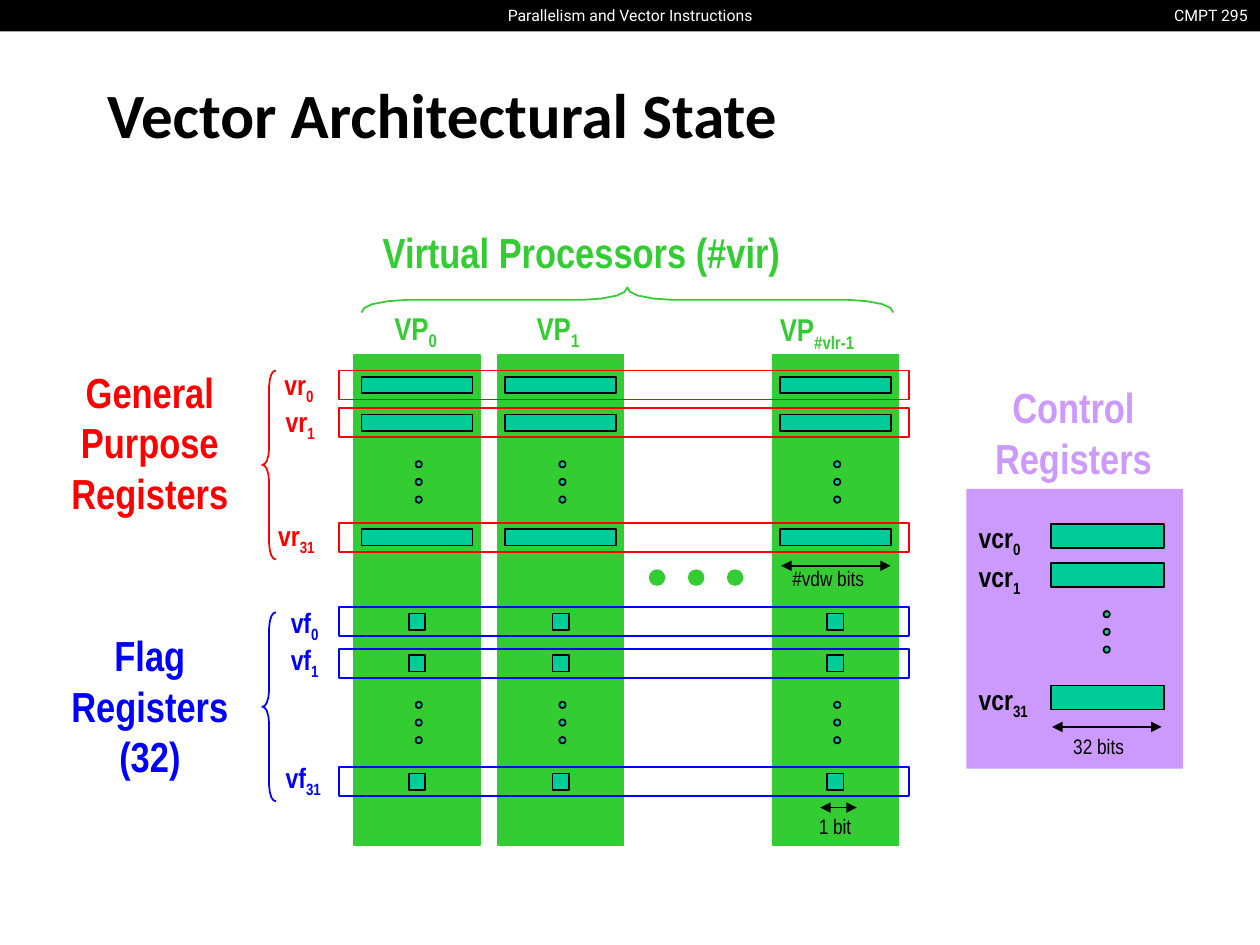
"""Builds a slide on the register state of a vector architecture."""
from dataclasses import dataclass

from lxml import etree
from pptx import Presentation
from pptx.dml.color import RGBColor
from pptx.enum.shapes import MSO_CONNECTOR, MSO_SHAPE
from pptx.enum.text import MSO_ANCHOR, MSO_AUTO_SIZE, PP_ALIGN
from pptx.oxml.ns import qn
from pptx.util import Pt

RECT, OVAL = MSO_SHAPE.RECTANGLE, MSO_SHAPE.OVAL
STRAIGHT = MSO_CONNECTOR.STRAIGHT
LEFT, CENTER, RIGHT = PP_ALIGN.LEFT, PP_ALIGN.CENTER, PP_ALIGN.RIGHT
BOTTOM = MSO_ANCHOR.BOTTOM
NO_AUTOFIT = MSO_AUTO_SIZE.NONE


@dataclass(frozen=True)
class Theme:
    """Colours, fonts and type sizes of the slide."""
    black: str = "000000"
    white: str = "FFFFFF"
    red: str = "FF0000"
    blue: str = "0000FF"
    green: str = "33CC33"
    teal: str = "00CC99"
    violet: str = "CC99FF"
    body_font: str = "Arial Narrow"
    title_font: str = "Calibri"
    header_font: str = "Roboto"
    title: int = 36
    heading: int = 24
    processor: int = 18
    register: int = 16
    note: int = 12
    header: int = 9
    line: int = 1


THEME = Theme()

TITLE = ("Vector Architectural State", (54, 41.8, 563.8, 48.2))
HEADERS = [
    ("Parallelism and Vector Instructions", (283, 0, 154, 18), CENTER),
    ("CMPT 295", (661.7, 0, 58.3, 18), RIGHT),
]
HEADINGS = [
    ("General\nPurpose\nRegisters", (33.1, 205.9, 105.1, 123.1), THEME.red),
    ("Flag\nRegisters\n(32)", (33.1, 356.4, 105.1, 94.3), THEME.blue),
    ("Virtual Processors (#vir)", (210.2, 126, 244.1, 36), THEME.green),
    ("Control\nRegisters", (560.9, 214.6, 105.1, 65.5), THEME.violet),
]
PROCESSORS = [
    ("0", 202.3, (218.2, 172.8)),
    ("1", 284.4, (299.5, 172.8)),
    ("#vlr-1", 441.4, (438.5, 173.5)),
]
REGISTER_FILES = [
    {"name": "vr", "color": THEME.red, "cell": (63.4, 9.4), "dots_top": 263.5,
     "rows": [("0", 211.7, (155.5, 206.6)), ("1", 233.3, (156.2, 227.5)),
              ("31", 298.8, (151.9, 293))]},
    {"name": "vf", "color": THEME.blue, "cell": (9.4, 9.4), "dots_top": 401,
     "rows": [("0", 347, (159.1, 342.7)), ("1", 370.8, (159.1, 363.6)),
              ("31", 438.5, (156.2, 431.3))]},
]
CONTROL_PANEL = (552.2, 279.4, 123.8, 159.8)
CONTROL_ROWS = [("0", 299.5), ("1", 321.8), ("31", 391.7)]
WIDTH_NOTES = [
    ("#vdw bits", (445.7, 319.7, 55.4, 21.6), (446.4, 509, 323.3)),
    ("1 bit", (460.8, 461.5, 33.1, 21.6), (468.7, 489.6, 461.5)),
    ("32 bits", (606.2, 415.4, 43.9, 21.6), (601.2, 663.8, 415.4)),
]
BRACES = [
    ((149.8, 211.7, 7.9, 108), THEME.red, True),
    ((149.8, 349.9, 7.9, 108), THEME.blue, True),
    ((206.6, 164.2, 303.8, 14.4), THEME.green, False),
]
BRACE_CURVE = [(0, 0), (0.005, 0.18), (0.02, 0.33), (0.05, 0.45), (0.085, 0.5)]
COLUMN_TOP, COLUMN_WIDTH, COLUMN_HEIGHT = 203, 72, 280
ROW_LEFT, ROW_WIDTH, ROW_HEIGHT = 193.9, 325.4, 16.6
DOT, DOT_STEP = 3.6, 10.1
SKIPPED_DOT, SKIPPED_LEFT, SKIPPED_STEP, SKIPPED_TOP = 9.4, 370.8, 22.3, 325.4


def rgb(color):
    return RGBColor.from_string(color)


def write(shape, text, *, size, color, sub="", font=THEME.body_font,
          bold=True, align=LEFT):
    """Fills a shape with formatted lines and an optional subscript."""
    frame = shape.text_frame
    frame.auto_size = NO_AUTOFIT
    frame.text = text
    if sub:
        subscript = frame.paragraphs[-1].add_run()
        subscript.text = sub
        subscript._r.get_or_add_rPr().set("baseline", "-25000")
    for paragraph in frame.paragraphs:
        paragraph.alignment = align
        for run in paragraph.runs:
            run.font.name, run.font.size = font, Pt(size)
            run.font.bold, run.font.color.rgb = bold, rgb(color)
    return frame


def add_label(slide, text, box, **style):
    frame = write(slide.shapes.add_textbox(*map(Pt, box)), text, **style)
    frame.word_wrap = False


def paint(shape, fill=None, line=None):
    shape.shadow.inherit = False
    if fill:
        shape.fill.solid()
        shape.fill.fore_color.rgb = rgb(fill)
    else:
        shape.fill.background()
    if line:
        shape.line.color.rgb = rgb(line)
        shape.line.width = Pt(THEME.line)
    else:
        shape.line.fill.background()


def add_block(slide, box, fill=None, line=None, kind=RECT):
    paint(slide.shapes.add_shape(kind, *map(Pt, box)), fill, line)


def add_dots(slide, center, top):
    for i in range(3):
        box = (center - DOT / 2, top + i * DOT_STEP, DOT, DOT)
        add_block(slide, box, THEME.teal, THEME.black, OVAL)


def add_double_arrow(slide, start, end, y):
    arrow = slide.shapes.add_connector(STRAIGHT, Pt(start), Pt(y), Pt(end), Pt(y))
    arrow.line.color.rgb = rgb(THEME.black)
    arrow.line.width = Pt(THEME.line)
    outline = arrow.line._get_or_add_ln()
    for end_tag in ("a:headEnd", "a:tailEnd"):
        etree.SubElement(outline, qn(end_tag), type="triangle")
    etree.SubElement(arrow._element.spPr, qn("a:effectLst"))


def add_brace(slide, box, color, upright):
    left, top, width, height = box
    half = BRACE_CURVE + [(0.5 - t, 1 - d) for t, d in reversed(BRACE_CURVE)]
    curve = half + [(1 - t, d) for t, d in reversed(half[:-1])]
    if upright:
        points = [(left + width * (1 - d), top + height * t) for t, d in curve]
    else:
        points = [(left + width * t, top + height * (1 - d)) for t, d in curve]
    points = [(Pt(x), Pt(y)) for x, y in points]
    builder = slide.shapes.build_freeform(*points[0])
    builder.add_line_segments(points[1:], close=False)
    paint(builder.convert_to_shape(), line=color)


def add_register_file(slide, name, color, cell, dots_top, rows):
    width, height = cell
    centers = [left + COLUMN_WIDTH / 2 for _, left, _ in PROCESSORS]
    for number, top, corner in rows:
        add_block(slide, (ROW_LEFT, top, ROW_WIDTH, ROW_HEIGHT), line=color)
        add_label(slide, name, (*corner, 45, 26), sub=number,
                  size=THEME.register, color=color)
        for center in centers:
            box = (center - width / 2, top + (ROW_HEIGHT - height) / 2, *cell)
            add_block(slide, box, THEME.teal, THEME.black)
    for center in centers:
        add_dots(slide, center + 1, dots_top)


def main():
    deck = Presentation()
    deck.slide_width, deck.slide_height = Pt(720), Pt(540)
    slide = deck.slides.add_slide(deck.slide_layouts[5])

    add_block(slide, (0, 0, 720, 18), THEME.black)
    for text, box, align in HEADERS:
        add_label(slide, text, box, size=THEME.header, color=THEME.white,
                  font=THEME.header_font, bold=False, align=align)
    text, box = TITLE
    title = slide.shapes.title
    title.left, title.top, title.width, title.height = map(Pt, box)
    write(title, text, size=THEME.title, color=THEME.black,
          font=THEME.title_font).vertical_anchor = BOTTOM

    for number, left, corner in PROCESSORS:
        add_block(slide, (left, COLUMN_TOP, COLUMN_WIDTH, COLUMN_HEIGHT),
                  THEME.green, THEME.green)
        add_label(slide, "VP", (*corner, 70, 28.8), sub=number,
                  size=THEME.processor, color=THEME.green)
    for i in range(3):
        box = (SKIPPED_LEFT + i * SKIPPED_STEP, SKIPPED_TOP, SKIPPED_DOT, SKIPPED_DOT)
        add_block(slide, box, THEME.green, kind=OVAL)
    for register_file in REGISTER_FILES:
        add_register_file(slide, **register_file)

    add_block(slide, CONTROL_PANEL, THEME.violet)
    for number, top in CONTROL_ROWS:
        add_block(slide, (600.5, top, 64.8, 13.7), THEME.teal, THEME.black)
        add_label(slide, "vcr", (CONTROL_PANEL[0], top - 5.4, 44, 26.6),
                  sub=number, size=THEME.register, color=THEME.black)
    add_dots(slide, 632.4, 349.2)

    for text, box, color in HEADINGS:
        add_label(slide, text, box, size=THEME.heading, color=color, align=CENTER)
    for brace in BRACES:
        add_brace(slide, *brace)
    for text, box, span in WIDTH_NOTES:
        add_label(slide, text, box, size=THEME.note, color=THEME.black, bold=False)
        add_double_arrow(slide, *span)
    deck.save("out.pptx")


if __name__ == "__main__":
    main()
